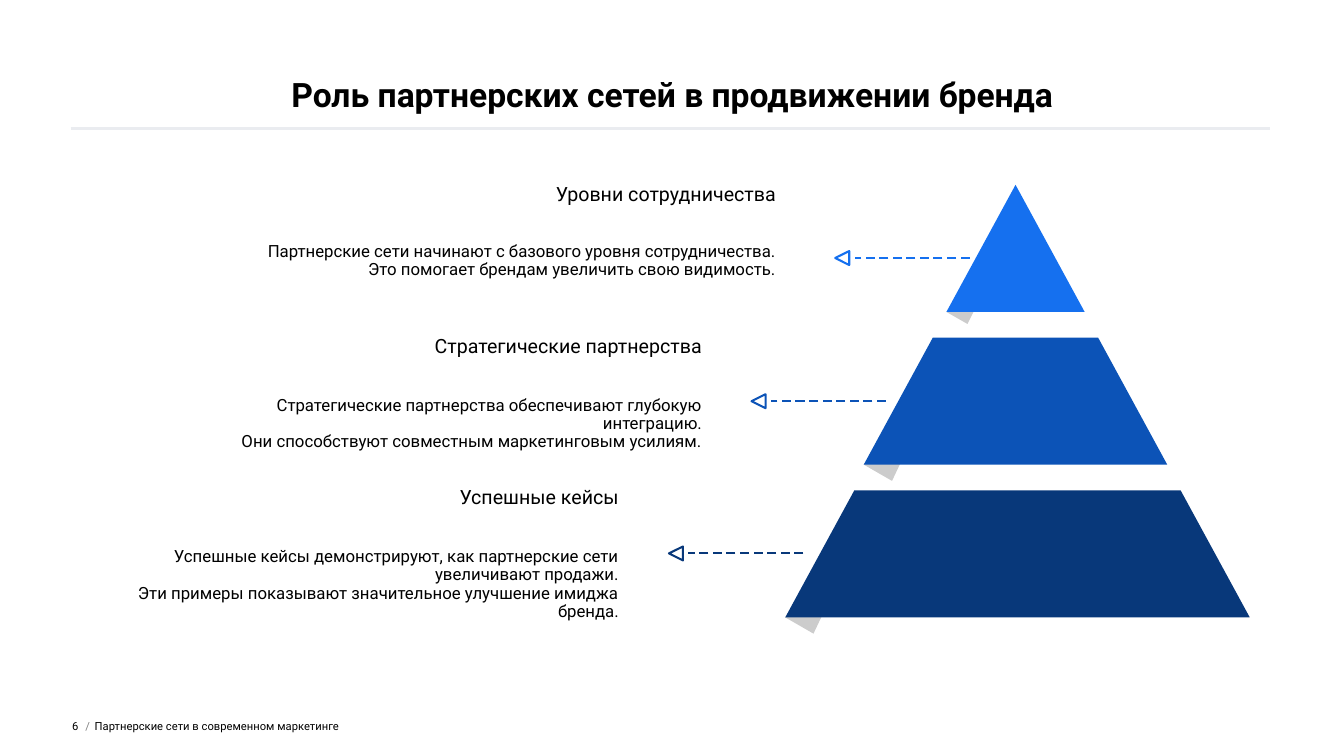
from lxml import etree
from pptx import Presentation
from pptx.dml.color import RGBColor
from pptx.enum.shapes import MSO_CONNECTOR
from pptx.enum.text import MSO_ANCHOR, MSO_AUTO_SIZE, PP_ALIGN
from pptx.oxml.ns import qn
from pptx.util import Pt

LEFT, CENTER, RIGHT = PP_ALIGN.LEFT, PP_ALIGN.CENTER, PP_ALIGN.RIGHT
TOP, MIDDLE, BOTTOM = MSO_ANCHOR.TOP, MSO_ANCHOR.MIDDLE, MSO_ANCHOR.BOTTOM
STRAIGHT = MSO_CONNECTOR.STRAIGHT
FIXED = MSO_AUTO_SIZE.NONE

BLACK = RGBColor(0x00, 0x00, 0x00)
GRAY = RGBColor(0x80, 0x80, 0x80)
PALE = RGBColor(0xEA, 0xEC, 0xF0)
BRIGHT = RGBColor(0x15, 0x70, 0xEF)
MEDIUM = RGBColor(0x0C, 0x53, 0xB7)
DARK = RGBColor(0x08, 0x38, 0x7A)

FONT = "Roboto"
PEAK = 132
HEIGHT = 90.8
PITCH = 109.1
SLOPE = 49.4
STROKE = 1.44
SMALL = [(0, 0), (31.7, -18.7), (29.5, -11.5), (25.2, -11.5), (15.1, 8.6)]
LARGE = [(0, 0), (32.4, -18.7), (27.4, -3.6), (20.2, 11.6)]

TIERS = [
    dict(color=BRIGHT, mid=725.4, half=SLOPE, fold=SMALL,
         tail=610.6, level=184.3, left=180, title_top=131.8, body_top=173.5,
         title="Уровни сотрудничества",
         body=["Партнерские сети начинают с базового уровня сотрудничества.",
               "Это помогает брендам увеличить свою видимость."]),
    dict(color=MEDIUM, mid=725.4, half=108.4, fold=LARGE,
         tail=550.8, level=286.6, left=127.1, title_top=240.5, body_top=283.7,
         title="Стратегические партнерства",
         body=["Стратегические партнерства обеспечивают глубокую интеграцию.",
               "Они способствуют совместным маркетинговым усилиям."]),
    dict(color=DARK, mid=726.8, half=165.9, fold=LARGE,
         tail=491.8, level=395.3, left=67.7, title_top=348.5, body_top=391.7,
         title="Успешные кейсы",
         body=["Успешные кейсы демонстрируют, как партнерские сети увеличивают продажи.",
               "Эти примеры показывают значительное улучшение имиджа бренда."]),
]


def write(shape, lines, size, align, anchor=TOP, color=BLACK, bold=False,
          before=0, pitch=None):
    frame = shape.text_frame
    frame.word_wrap = True
    frame.auto_size = FIXED
    frame.vertical_anchor = anchor
    frame.margin_left = frame.margin_right = 0
    frame.margin_top = frame.margin_bottom = 0
    for i, line in enumerate(lines):
        para = frame.add_paragraph() if i else frame.paragraphs[0]
        para.alignment = align
        para.space_before = Pt(before)
        if pitch:
            para.line_spacing = pitch
        run = para.add_run()
        run.text = line
        font = run.font
        font.name, font.size, font.bold = FONT, Pt(size), bold
        font.color.rgb = color


def add_text(slide, box, lines, size, align, **style):
    shape = slide.shapes.add_textbox(*map(Pt, box))
    write(shape, lines, size, align, **style)


def add_title(slide, text):
    shape = slide.shapes.title
    shape.left, shape.top = Pt(50.4), Pt(0)
    shape.width, shape.height = Pt(859.7), Pt(81.4)
    write(shape, [text], 24, CENTER, anchor=BOTTOM, bold=True, before=10)


def add_line(slide, start, end, color, width):
    line = slide.shapes.add_connector(STRAIGHT, *map(Pt, start + end))
    line.line.color.rgb = color
    line.line.width = Pt(width)
    etree.SubElement(line._element.spPr, qn("a:effectLst"))
    return line


def add_shape(slide, points):
    first, *rest = [(Pt(x), Pt(y)) for x, y in points]
    pen = slide.shapes.build_freeform(*first)
    pen.add_line_segments(rest, close=True)
    shape = pen.convert_to_shape()
    shape.shadow.inherit = False
    return shape


def add_solid(slide, points, color):
    shape = add_shape(slide, points)
    shape.fill.solid()
    shape.fill.fore_color.rgb = color
    shape.line.fill.background()
    return shape


def add_fold(slide, tier, base):
    left = tier["mid"] - tier["half"]
    points = [(left + x, base + y) for x, y in tier["fold"]]
    shape = add_solid(slide, points, BLACK)
    tint = shape._element.spPr.find(qn("a:solidFill"))[0]
    etree.SubElement(tint, qn("a:alpha"), val="20000")


def add_tier(slide, tier, top):
    mid, half = tier["mid"], tier["half"]
    base, cap = top + HEIGHT, half - SLOPE
    points = [(mid + half, base), (mid - half, base), (mid - cap, top)]
    if cap:
        points.append((mid + cap, top))
    add_solid(slide, points, tier["color"])


def add_arrow(slide, x, y, color):
    line = add_line(slide, (x + 82, y), (x, y), color, STROKE)
    ln = line._element.spPr.find(qn("a:ln"))
    dash = etree.SubElement(ln, qn("a:custDash"))
    etree.SubElement(dash, qn("a:ds"), d="450000", sp="220000")
    head = add_shape(slide, [(x - 14, y), (x - 4, y - 5), (x - 4, y + 5)])
    head.fill.background()
    head.line.color.rgb = color
    head.line.width = Pt(STROKE)
    etree.SubElement(head._element.spPr.find(qn("a:ln")), qn("a:round"))


def add_label(slide, tier):
    left = tier["left"]
    add_text(slide, (left, tier["body_top"], 374.4, 50.4), tier["body"],
             12, RIGHT, pitch=0.9)
    add_text(slide, (left, tier["title_top"], 374.4, 36), [tier["title"]],
             14, RIGHT, pitch=0.9)


def add_footer(slide):
    add_text(slide, (59, 497.5, 8.6, 42.5), [" /"], 8, LEFT,
             anchor=MIDDLE, color=GRAY)
    add_text(slide, (67.7, 496.8, 620, 43.2),
             ["Партнерские сети в современном маркетинге"], 8, LEFT,
             anchor=MIDDLE, before=10)
    add_text(slide, (33.8, 496.8, 22.3, 43.2), ["6"], 8, RIGHT,
             anchor=MIDDLE, before=10)


def main():
    deck = Presentation()
    deck.slide_width, deck.slide_height = Pt(960), Pt(540)
    slide = deck.slides.add_slide(deck.slide_layouts[5])
    add_title(slide, "Роль партнерских сетей в продвижении бренда")
    add_line(slide, (50.4, 91.8), (907.2, 91.8), PALE, 2)
    add_footer(slide)
    tops = [PEAK + i * PITCH for i in range(len(TIERS))]
    for tier, top in zip(TIERS, tops):
        add_fold(slide, tier, top + HEIGHT)
    for tier, top in zip(TIERS, tops):
        add_tier(slide, tier, top)
        add_arrow(slide, tier["tail"], tier["level"], tier["color"])
        add_label(slide, tier)
    deck.save("out.pptx")


if __name__ == "__main__":
    main()
